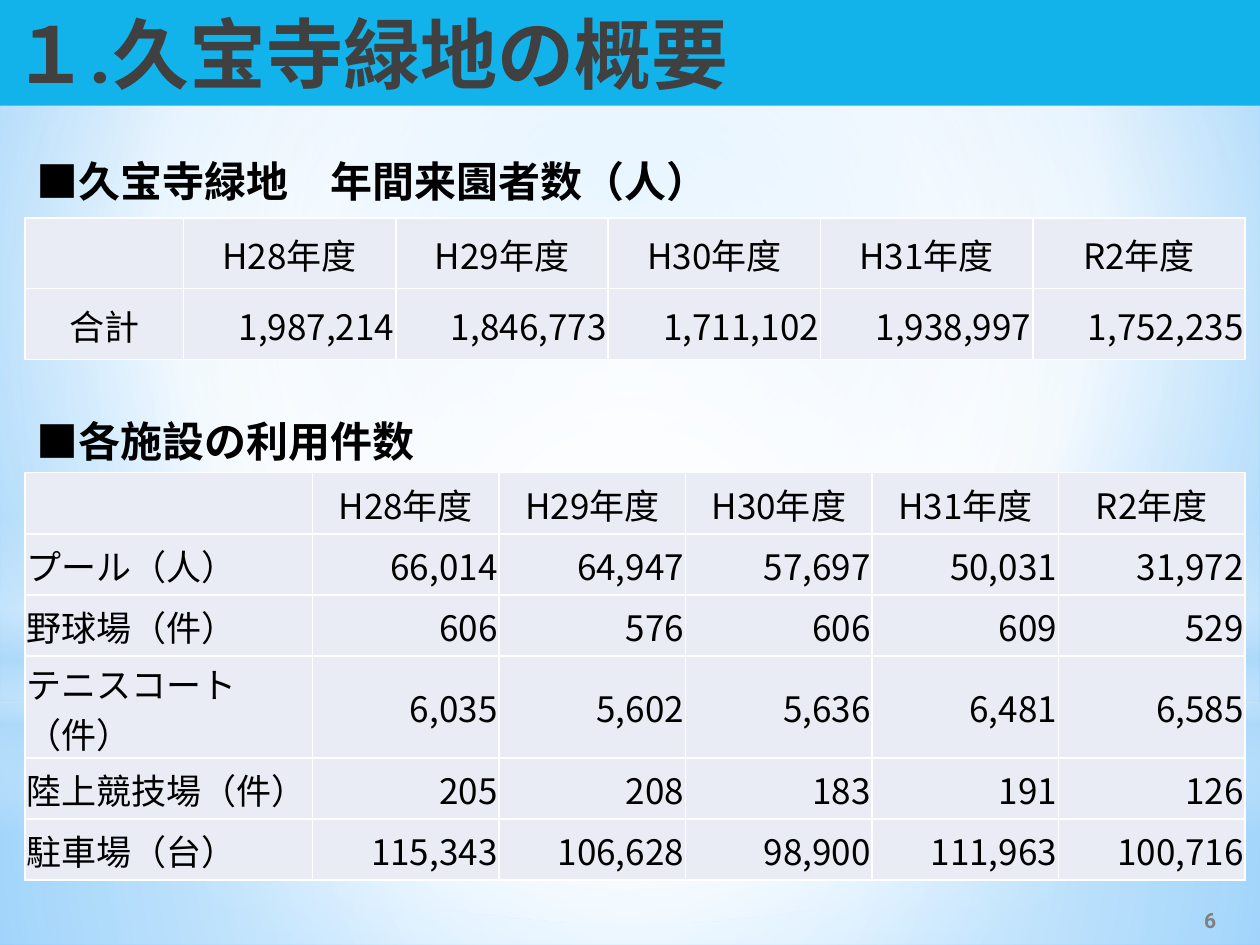
from dataclasses import dataclass

from lxml.etree import SubElement
from pptx import Presentation
from pptx.dml.color import RGBColor
from pptx.enum.shapes import MSO_SHAPE
from pptx.enum.text import MSO_ANCHOR, PP_ALIGN
from pptx.oxml import parse_xml
from pptx.oxml.ns import nsdecls, qn
from pptx.util import Cm, Pt


@dataclass(frozen=True)
class Theme:
    latin: str = "Roboto"
    japanese: str = "Noto Sans CJK JP"
    black: str = "000000"
    title_text: str = "404040"
    page_text: str = "808080"
    title_bar: str = "12B2EB"
    cell: str = "E9EBF5"
    white: str = "FFFFFF"
    haze: str = "B4DCFA"
    sky: str = "9ED5FF"
    deep_sky: str = "5BB9FF"
    title_size: int = 44
    heading_size: int = 24
    table_size: int = 20
    page_size: int = 12


theme = Theme()


def paint_gradient(properties, stops, centre=None):
    """Replace a solid fill by (position, colour, opacity) stops: radial round centre, else vertical."""
    stop_xml = "".join(
        f'<a:gs pos="{position * 1000}"><a:srgbClr val="{colour}">'
        f'<a:alpha val="{opacity * 1000}"/></a:srgbClr></a:gs>'
        for position, colour, opacity in stops
    )
    if centre:
        left, top, right, bottom = (edge * 1000 for edge in centre)
        direction = (f'<a:path path="circle"><a:fillToRect l="{left}" t="{top}" '
                     f'r="{right}" b="{bottom}"/></a:path>')
    else:
        direction = '<a:lin ang="5400000" scaled="0"/>'
    gradient = parse_xml(f'<a:gradFill {nsdecls("a")} rotWithShape="1">'
                         f'<a:gsLst>{stop_xml}</a:gsLst>{direction}</a:gradFill>')
    properties.replace(properties.find(qn("a:solidFill")), gradient)


def write(text_frame, text, size, colour, alignment, bold=False, latin=theme.japanese):
    text_frame.text = text
    paragraph = text_frame.paragraphs[0]
    paragraph.alignment = alignment
    for run in paragraph.runs:
        run.font.size = Pt(size)
        run.font.bold = bold
        run.font.name = latin
        run.font.color.rgb = RGBColor.from_string(colour)
        SubElement(run.font._element, qn("a:ea")).set("typeface", theme.japanese)


presentation = Presentation()
presentation.slide_width = Cm(25.4)
presentation.slide_height = Cm(19.05)
slide = presentation.slides.add_slide(presentation.slide_layouts[5])

# Sky background with soft layers of light
slide.background.fill.solid()
paint_gradient(
    slide._element.find(".//" + qn("p:bgPr")),
    [(0, theme.sky, 100), (60, theme.white, 100), (100, theme.deep_sky, 100)],
    (20, 10, 20, 60),
)
middle = (50, 50, 50, 50)
light_layers = [
    (MSO_SHAPE.RECTANGLE, 14.17, 4.88, middle,
     [(0, theme.white, 91), (37, theme.white, 76), (100, theme.haze, 79)]),
    (MSO_SHAPE.RECTANGLE, 0, 14.17, middle,
     [(0, theme.white, 89), (48, theme.white, 62), (100, theme.haze, 79)]),
    (MSO_SHAPE.RECTANGLE, 10.46, 6.35, None,
     [(0, theme.white, 0), (29, theme.white, 30), (45, theme.haze, 40),
      (55, theme.white, 26), (65, theme.haze, 60), (100, theme.white, 0)]),
    (MSO_SHAPE.OVAL, 4.45, 14.17, middle,
     [(0, theme.white, 100), (56, theme.white, 0)]),
]
for preset, top, height, centre, stops in light_layers:
    layer = slide.shapes.add_shape(preset, 0, Cm(top), presentation.slide_width, Cm(height))
    layer.shadow.inherit = False
    layer.line.fill.background()
    layer.fill.solid()
    paint_gradient(layer._element.spPr, stops, centre)

# Title bar, brought in front of the background layers
title = slide.shapes.title
slide.shapes._spTree.append(title._element)
title.left, title.top, title.width, title.height = 0, 0, Cm(25.48), Cm(2.13)
title.fill.solid()
title.fill.fore_color.rgb = RGBColor.from_string(theme.title_bar)
title.text_frame.vertical_anchor = MSO_ANCHOR.MIDDLE
write(title.text_frame, "１.久宝寺緑地の概要", theme.title_size, theme.title_text,
      PP_ALIGN.LEFT, bold=True, latin=theme.latin)

# Sections: heading, heading top, table top, row height, column widths, label alignment, rows
years = ["", "H28年度", "H29年度", "H30年度", "H31年度", "R2年度"]
longest_one_line_label = 8
two_line_height = 2.06
sections = [
    ("■久宝寺緑地　年間来園者数（人）", 3.02, 4.39, 1.43, 3.2, 4.28, PP_ALIGN.CENTER, [
        ["合計", "1,987,214", "1,846,773", "1,711,102", "1,938,997", "1,752,235"],
    ]),
    ("■各施設の利用件数", 8.26, 9.53, 1.23, 5.8, 3.76, PP_ALIGN.LEFT, [
        ["プール（人）", "66,014", "64,947", "57,697", "50,031", "31,972"],
        ["野球場（件）", "606", "576", "606", "609", "529"],
        ["テニスコート（件）", "6,035", "5,602", "5,636", "6,481", "6,585"],
        ["陸上競技場（件）", "205", "208", "183", "191", "126"],
        ["駐車場（台）", "115,343", "106,628", "98,900", "111,963", "100,716"],
    ]),
]
for (heading, heading_top, table_top, row_height, label_width, year_width,
     label_alignment, records) in sections:
    heading_box = slide.shapes.add_textbox(Cm(0.48), Cm(heading_top), Cm(22.48), Cm(1.27))
    heading_box.text_frame.word_wrap = True
    write(heading_box.text_frame, heading, theme.heading_size, theme.black,
          PP_ALIGN.LEFT, bold=True)

    rows = [years, *records]
    heights = [two_line_height if len(label) > longest_one_line_label else row_height
               for label, *_ in rows]
    table = slide.shapes.add_table(
        len(rows), len(years), Cm(0.5), Cm(table_top),
        Cm(label_width + 5 * year_width), Cm(sum(heights)),
    ).table
    for column_index, column in enumerate(table.columns):
        column.width = Cm(year_width if column_index else label_width)
    for row_index, values in enumerate(rows):
        table.rows[row_index].height = Cm(heights[row_index])
        for column_index, value in enumerate(values):
            cell = table.cell(row_index, column_index)
            cell.fill.solid()
            cell.fill.fore_color.rgb = RGBColor.from_string(theme.cell)
            cell.vertical_anchor = MSO_ANCHOR.MIDDLE
            cell.margin_left = cell.margin_top = cell.margin_right = Cm(0.03)
            cell.margin_bottom = 0
            if row_index == 0:
                alignment = PP_ALIGN.CENTER
            else:
                alignment = PP_ALIGN.RIGHT if column_index else label_alignment
            write(cell.text_frame, value, theme.table_size, theme.black, alignment)
            for position, side in enumerate(("lnL", "lnR", "lnT", "lnB")):
                border = parse_xml(
                    f'<a:{side} {nsdecls("a")} w="{Pt(1)}"><a:solidFill>'
                    f'<a:srgbClr val="{theme.white}"/></a:solidFill></a:{side}>')
                cell._tc.tcPr.insert(position, border)

page_number = slide.shapes.add_textbox(Cm(23.39), Cm(18.03), Cm(2.01), Cm(1.02))
page_number.text_frame.word_wrap = True
page_number.text_frame.vertical_anchor = MSO_ANCHOR.MIDDLE
write(page_number.text_frame, "6", theme.page_size, theme.page_text,
      PP_ALIGN.CENTER, bold=True, latin=theme.latin)

presentation.save("out.pptx")
